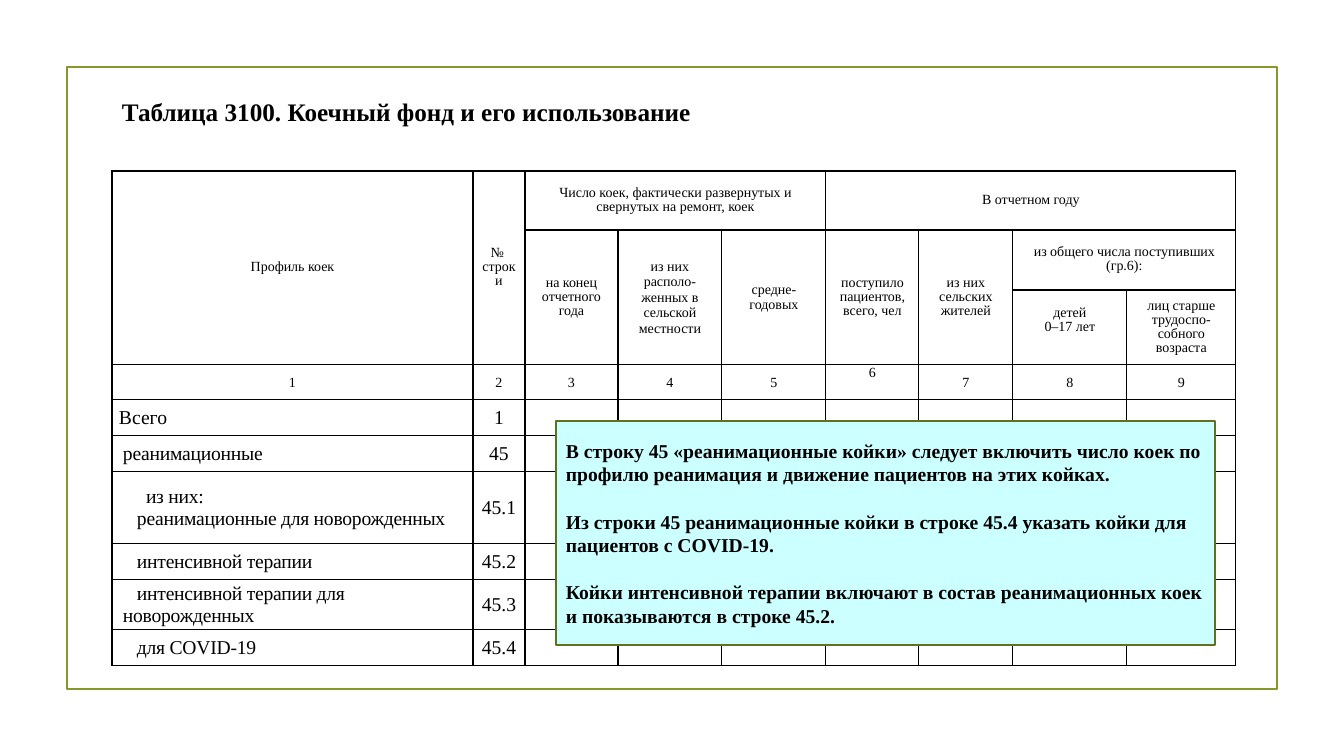
from lxml import etree
from pptx import Presentation
from pptx.dml.color import RGBColor
from pptx.enum.shapes import MSO_SHAPE
from pptx.enum.text import MSO_ANCHOR, PP_ALIGN
from pptx.oxml.ns import qn
from pptx.util import Emu, Pt

RECTANGLE = MSO_SHAPE.RECTANGLE
TOP, MIDDLE = MSO_ANCHOR.TOP, MSO_ANCHOR.MIDDLE
LEFT, CENTER = PP_ALIGN.LEFT, PP_ALIGN.CENTER

THEME = {
    "font": "Times New Roman",
    "text": RGBColor(0x00, 0x00, 0x00),
    "frame": RGBColor(0x83, 0x99, 0x2A),
    "note_fill": RGBColor(0xCC, 0xFF, 0xFF),
    "note_line": RGBColor(0x61, 0x71, 0x1F),
    "border": "000000",
    "title": 18,
    "body": 14,
    "header": 10,
}
PX = 914400 / 100.8


def px(*lengths):
    return [Emu(round(length * PX)) for length in lengths]


def write(text_frame, lines, size, bold=False, align=LEFT, spacing=None):
    text_frame.word_wrap = True
    for index, line in enumerate(lines):
        paragraph = text_frame.paragraphs[0] if index == 0 else text_frame.add_paragraph()
        paragraph.text = line
        paragraph.alignment = align
        if spacing:
            paragraph.line_spacing = Pt(spacing)
        paragraph.font.name = THEME["font"]
        paragraph.font.size = Pt(size)
        paragraph.font.bold = bold
        paragraph.font.color.rgb = THEME["text"]


presentation = Presentation()
presentation.slide_width, presentation.slide_height = px(1344, 756)
slide = presentation.slides.add_slide(presentation.slide_layouts[6])
shapes = slide.shapes

# Frame
frame = shapes.add_shape(RECTANGLE, *px(67, 67, 1210, 622))
frame.shadow.inherit = False
frame.fill.background()
frame.line.color.rgb = THEME["frame"]
frame.line.width = Pt(1.25)

# Title
title = shapes.add_textbox(*px(112, 91, 1135, 40))
write(title.text_frame, ["Таблица 3100. Коечный фонд и его использование"], THEME["title"], bold=True)

# Table grid
column_widths = px(361, 52, 93, 104, 104, 93, 94, 114, 109)
row_heights = px(59, 60, 75, 35, 36, 36, 72, 36, 50, 36)
graphic_frame = shapes.add_table(
    len(row_heights), len(column_widths), *px(112, 171), sum(column_widths), sum(row_heights))
table = graphic_frame.table
table.first_row = table.horz_banding = False
for column, width in zip(table.columns, column_widths):
    column.width = width
for row, height in zip(table.rows, row_heights):
    row.height = height

side_margin, = px(7)
for cell in table.iter_cells():
    cell.margin_left = cell.margin_right = side_margin
    cell.margin_top = cell.margin_bottom = 0
    cell.vertical_anchor = MIDDLE
    properties = cell._tc.get_or_add_tcPr()
    for side in ("a:lnL", "a:lnR", "a:lnT", "a:lnB"):
        line = etree.SubElement(properties, qn(side), w=str(Pt(1)))
        fill = etree.SubElement(line, qn("a:solidFill"))
        etree.SubElement(fill, qn("a:srgbClr"), val=THEME["border"])
    cell.fill.background()

# Header: row, column, row span, column span, line spacing, paragraphs
headers = [
    (0, 0, 3, 1, 10, ["Профиль коек"]),
    (0, 1, 3, 1, 10, ["№ \nстроки"]),
    (0, 2, 1, 3, 10, ["Число коек, фактически развернутых и свернутых на ремонт, коек"]),
    (0, 5, 1, 4, 10, ["В отчетном году"]),
    (1, 2, 2, 1, 10, ["на конец отчетного года"]),
    (1, 3, 2, 1, None, ["из них", "располо-", "женных в сельской местности"]),
    (1, 4, 2, 1, None, ["средне-годовых"]),
    (1, 5, 2, 1, 10, ["поступило пациентов, всего, чел"]),
    (1, 6, 2, 1, 10, ["из них сельских жителей"]),
    (1, 7, 1, 2, 10, ["из общего числа поступивших (гр.6):"]),
    (2, 7, 1, 1, 10, ["детей", "0–17 лет"]),
    (2, 8, 1, 1, 10, ["лиц старше трудоспо-собного возраста"]),
]
for row, column, row_span, column_span, spacing, lines in headers:
    cell = table.cell(row, column)
    if row_span * column_span > 1:
        cell.merge(table.cell(row + row_span - 1, column + column_span - 1))
    write(cell.text_frame, lines, THEME["header"], align=CENTER, spacing=spacing)
table.cell(2, 7).margin_bottom, = px(14)

# Column numbers
for column in range(len(column_widths)):
    write(table.cell(3, column).text_frame, [str(column + 1)], THEME["header"], align=CENTER, spacing=11)
table.cell(3, 5).vertical_anchor = TOP

# Bed profiles: row number, paragraphs with their first-line indents
profiles = [
    ("1", [("Всего", 0)]),
    ("45", [("реанимационные", 0)]),
    ("45.1", [("из них:", 23), ("реанимационные для новорожденных", 14)]),
    ("45.2", [("интенсивной терапии", 14)]),
    ("45.3", [("интенсивной терапии для новорожденных", 14)]),
    ("45.4", [("для COVID-19", 14)]),
]
for row, (number, lines) in enumerate(profiles, start=4):
    name_frame = table.cell(row, 0).text_frame
    write(name_frame, [text for text, indent in lines], THEME["body"])
    write(table.cell(row, 1).text_frame, [number], THEME["body"], align=CENTER)
    if row == 4:
        continue
    for paragraph, (text, indent) in zip(name_frame.paragraphs, lines):
        left_margin, first_line = px(4, indent)
        paragraph_properties = paragraph._p.get_or_add_pPr()
        paragraph_properties.set("marL", str(left_margin))
        paragraph_properties.set("indent", str(first_line))
        paragraph.runs[0]._r.get_or_add_rPr().set("spc", "-20")

# Note over the table
note = shapes.add_shape(RECTANGLE, *px(556, 421, 659, 224))
note.shadow.inherit = False
note.fill.solid()
note.fill.fore_color.rgb = THEME["note_fill"]
note.line.color.rgb = THEME["note_line"]
note.line.width = Pt(1.25)
note.text_frame.vertical_anchor = MIDDLE
write(note.text_frame, [
    "В строку 45 «реанимационные койки» следует включить число коек по",
    "профилю реанимация и движение пациентов на этих койках.",
    "Из строки 45 реанимационные койки в строке 45.4 указать койки для",
    "пациентов с COVID-19.",
    "Койки интенсивной терапии включают в состав реанимационных коек и показываются в строке 45.2.",
], THEME["body"], bold=True)
for index in (2, 4):
    note.text_frame.paragraphs[index].space_before = Pt(17)

presentation.save("out.pptx")
